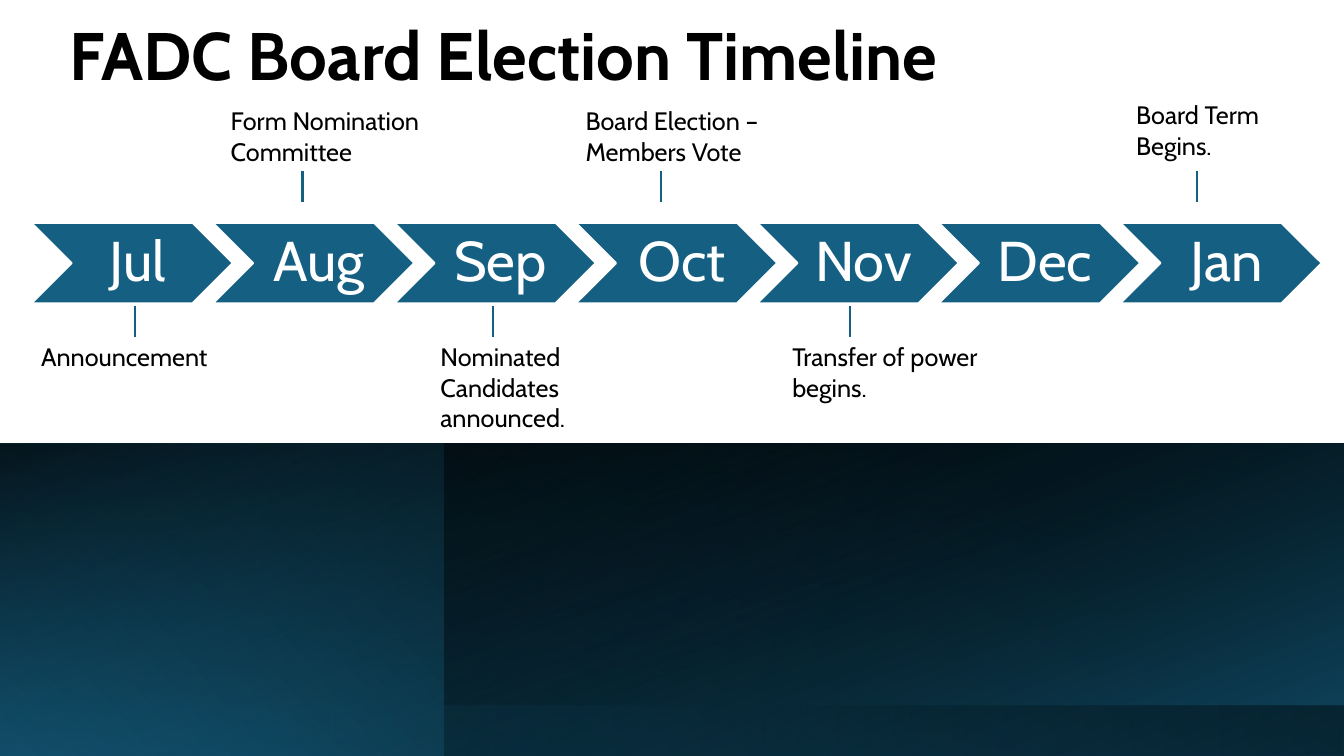
"""Build the board election timeline slide."""
from pptx import Presentation
from pptx.dml.color import RGBColor
from pptx.enum.shapes import MSO_CONNECTOR, MSO_SHAPE
from pptx.enum.text import MSO_ANCHOR, MSO_AUTO_SIZE, PP_ALIGN
from pptx.oxml import parse_xml
from pptx.oxml.ns import nsdecls
from pptx.util import Inches, Pt

COLOURS = {"black": "000000", "white": "FFFFFF", "teal": "156082",
           "ocean": "104862", "deep": "0B3041"}
WIDTH, HEIGHT = 13.33, 7.5


def write(shape, words, size, colour, align, bold=False):
    """Put one formatted paragraph in a shape."""
    frame = shape.text_frame
    frame.word_wrap = True
    para = frame.paragraphs[0]
    para.alignment = align
    span = para.add_run()
    span.text = words
    values = {"name": "Cabin", "size": Pt(size), "bold": bold}
    for key, value in values.items():
        setattr(span.font, key, value)
    span.font.color.rgb = RGBColor.from_string(COLOURS[colour])
    return frame, para


def shade(shape, stops, angle):
    """Fill a shape with a linear gradient of (position, colour, opacity) stops."""
    shape.fill.solid()
    marks = "".join(
        f'<a:gs pos="{place * 1000}"><a:srgbClr val="{COLOURS[colour]}">'
        f'<a:alpha val="{opacity * 1000}"/></a:srgbClr></a:gs>'
        for place, colour, opacity in stops)
    gradient = parse_xml(
        f'<a:gradFill {nsdecls("a")} rotWithShape="1"><a:gsLst>{marks}</a:gsLst>'
        f'<a:lin ang="{angle * 60000}" scaled="0"/></a:gradFill>')
    properties = shape.element.spPr
    properties.replace(properties.find("{*}solidFill"), gradient)
    properties.find("{*}xfrm").set("flipH", "1")


deck = Presentation()
deck.slide_width, deck.slide_height = Inches(WIDTH), Inches(HEIGHT)
page = deck.slides.add_slide(deck.slide_layouts[5])

title = page.shapes.title
place = {"left": 0.59, "top": 0.15, "width": 10.23, "height": 0.84}
for key, value in place.items():
    setattr(title, key, Inches(value))
frame, para = write(title, "FADC Board Election Timeline", 48, "black", PP_ALIGN.LEFT, True)
frame.auto_size = MSO_AUTO_SIZE.NONE
frame.vertical_anchor = MSO_ANCHOR.BOTTOM
para.line_spacing = 0.9

BAND_TOP = 4.4
bands = [
    (0, BAND_TOP, 180, [(0, "teal", 100), (78, "black", 100)], 40),
    (WIDTH * 0.331, BAND_TOP, 0, [(0, "black", 63), (100, "ocean", 100)], 110),
    (0, BAND_TOP, 0, [(39, "deep", 0), (100, "black", 72)], 290),
    (0, 7, 0, [(0, "black", 43), (79, "ocean", 22)], 0),
]
for left, top, turn, stops, angle in bands:
    band = page.shapes.add_shape(MSO_SHAPE.RECTANGLE, Inches(left), Inches(top),
                                 Inches(WIDTH - left), Inches(HEIGHT - top))
    band.shadow.inherit = False
    band.rotation = turn
    band.line.fill.background()
    shade(band, stops, angle)

START, STEP = 0.31, 1.8
for column, month in enumerate(["Jul", "Aug", "Sep", "Oct", "Nov", "Dec", "Jan"]):
    chevron = page.shapes.add_shape(MSO_SHAPE.CHEVRON, Inches(START + column * STEP),
                                    Inches(2.21), Inches(2), Inches(0.8))
    chevron.shadow.inherit = False
    chevron.fill.solid()
    chevron.fill.fore_color.rgb = RGBColor.from_string(COLOURS["teal"])
    chevron.line.color.rgb = RGBColor.from_string(COLOURS["white"])
    chevron.line.width = Pt(1.5)
    frame, para = write(chevron, month, 40, "white", PP_ALIGN.CENTER)
    para.line_spacing = 0.9
    frame.vertical_anchor = MSO_ANCHOR.MIDDLE
    insets = {"margin_left": 0.17, "margin_top": 0.06,
              "margin_right": 0.06, "margin_bottom": 0.06}
    for key, value in insets.items():
        setattr(frame, key, Inches(value))

BELOW, ABOVE = 3.04, 1.7
events = [
    ("Announcement", 0.31, 3.34, 2.07, 0.4, 1.34, BELOW),
    ("Form Nomination Committee", 2.19, 1, 2.48, 0.71, 3, ABOVE),
    ("Nominated Candidates announced.", 4.27, 3.34, 2.07, 1.01, 4.89, BELOW),
    ("Board Election – Members Vote", 5.71, 1, 2.07, 0.71, 6.56, ABOVE),
    ("Transfer of power begins.", 7.76, 3.34, 2.07, 0.71, 8.43, BELOW),
    ("Board Term Begins.", 11.17, 0.94, 1.57, 0.71, 11.87, ABOVE),
]
for words, left, top, width, height, tick_left, tick_top in events:
    box = page.shapes.add_textbox(Inches(left), Inches(top), Inches(width), Inches(height))
    frame, para = write(box, words, 18, "black", PP_ALIGN.LEFT)
    frame.auto_size = MSO_AUTO_SIZE.SHAPE_TO_FIT_TEXT
    tick = page.shapes.add_connector(MSO_CONNECTOR.STRAIGHT, Inches(tick_left), Inches(tick_top),
                                     Inches(tick_left), Inches(tick_top + 0.3))
    tick.line.color.rgb = RGBColor.from_string(COLOURS["teal"])
    tick.line.width = Pt(1.5)
    tick.element.spPr.append(parse_xml(f'<a:effectLst {nsdecls("a")}/>'))

deck.save("out.pptx")
